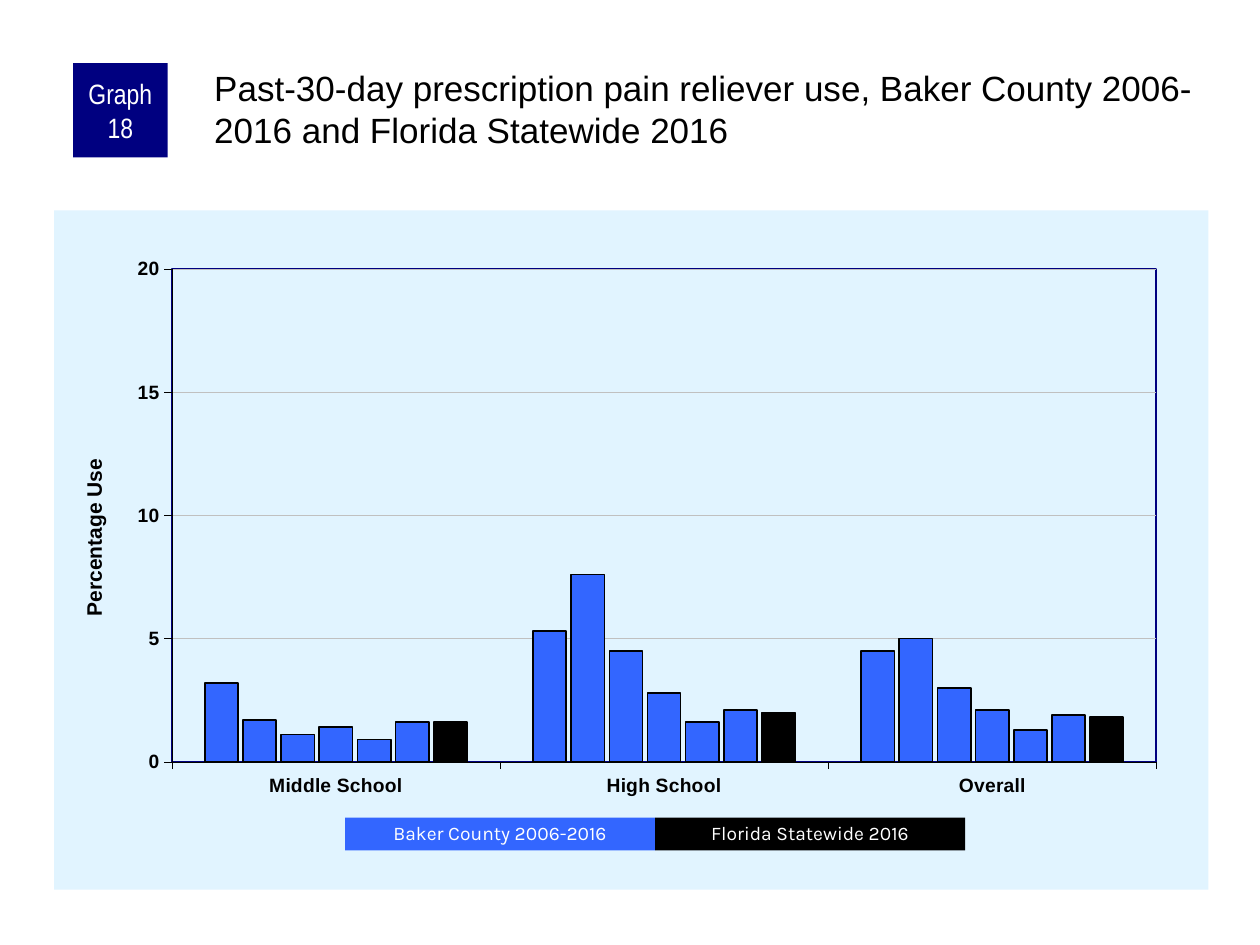
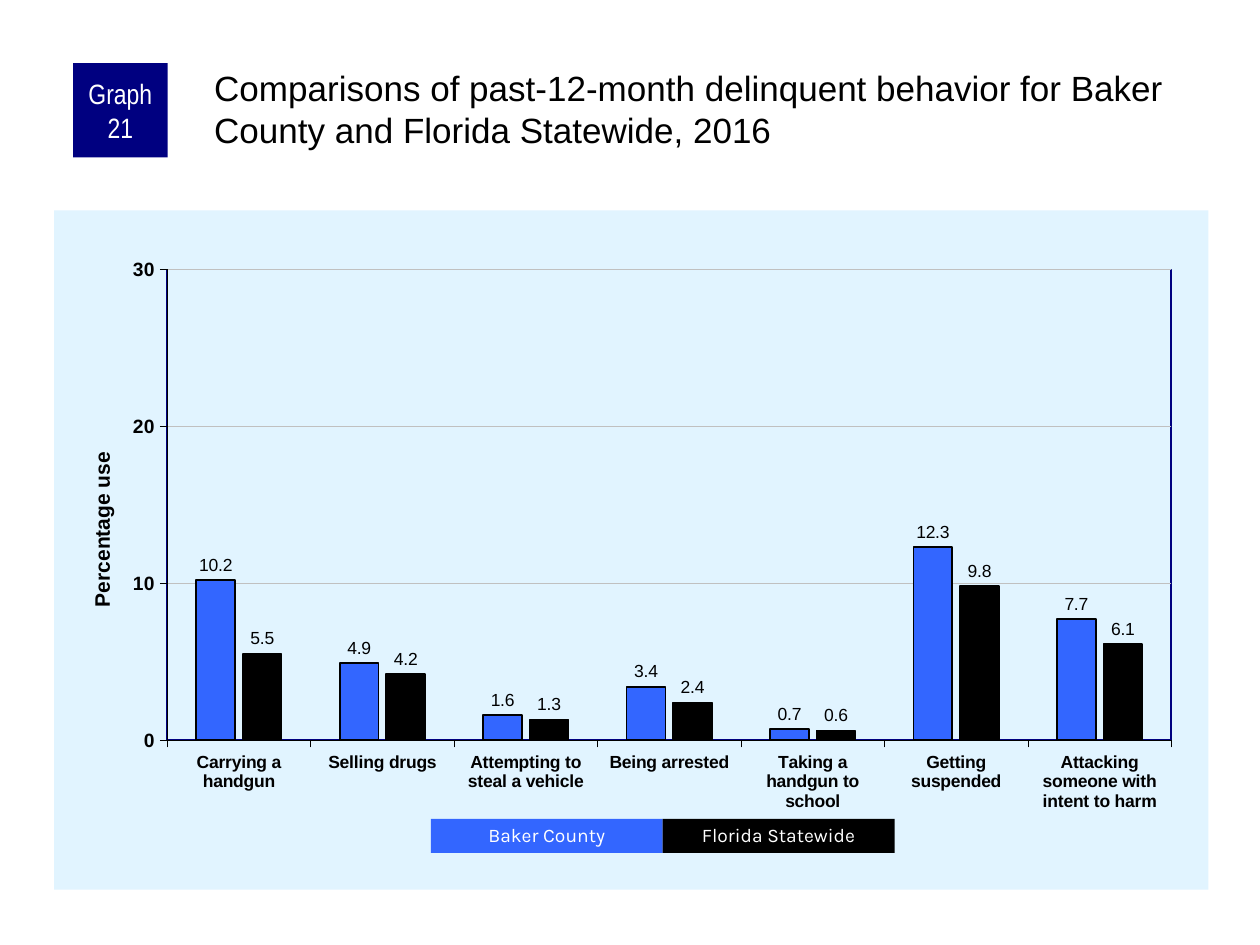
from dataclasses import dataclass
from typing import Optional

from lxml import etree
from pptx import Presentation
from pptx.chart.data import CategoryChartData
from pptx.dml.color import RGBColor
from pptx.enum.chart import XL_CHART_TYPE as ChartType
from pptx.enum.chart import XL_LABEL_POSITION as LabelPosition
from pptx.enum.chart import XL_TICK_MARK as TickMark
from pptx.enum.shapes import MSO_SHAPE as Preset
from pptx.enum.text import MSO_ANCHOR as Anchor
from pptx.enum.text import MSO_AUTO_SIZE as AutoSize
from pptx.enum.text import PP_ALIGN as Align
from pptx.oxml import parse_xml
from pptx.oxml.ns import nsdecls, qn
from pptx.util import Inches, Pt


@dataclass(frozen=True)
class Theme:
    navy: str = "000080"
    county: str = "3366FF"
    state: str = "000000"
    panel: str = "E1F4FF"
    grid: str = "C0C0C0"
    ink: str = "000000"
    white: str = "FFFFFF"
    body_font: str = "Arial"
    badge_font: str = "Arial Narrow"
    legend_font: str = "Karla"
    title_size: float = 20
    badge_size: float = 16
    axis_title_size: float = 12
    axis_size: float = 11
    label_size: float = 10
    legend_size: float = 11


THEME = Theme()


@dataclass(frozen=True)
class Legend:
    left: float
    top: float
    width: float
    height: float
    labels: tuple[str, str]


@dataclass(frozen=True)
class GraphPage:
    number: int
    title: str
    axis_title: str
    axis_title_at: tuple[float, float]
    categories: tuple[str, ...]
    series: tuple[tuple[float, ...], ...]
    maximum: float
    step: float
    gap: int
    overlap: int
    plot_area: tuple[float, float, float, float]
    category_size: float
    show_values: bool
    legend: Legend


PAGES = (
    GraphPage(
        number=18,
        title="Past-30-day prescription pain reliever use, Baker County "
              "2006-2016 and Florida Statewide 2016",
        axis_title="Percentage Use",
        axis_title_at=(0.02, 0.36),
        categories=("Middle School", "High School", "Overall"),
        series=(
            (3.2, 5.3, 4.5),
            (1.7, 7.6, 5),
            (1.1, 4.5, 3),
            (1.4, 2.8, 2.1),
            (0.9, 1.6, 1.3),
            (1.6, 2.1, 1.9),
            (1.6, 2, 1.8),
        ),
        maximum=20, step=5, gap=200, overlap=-15,
        plot_area=(0.102, 0.086, 0.853, 0.726),
        category_size=11,
        show_values=False,
        legend=Legend(2.74, 6.49, 2.46, 0.26,
                      ("Baker County 2006-2016", "Florida Statewide 2016")),
    ),
    GraphPage(
        number=21,
        title="Comparisons of past-12-month delinquent behavior for Baker "
              "County and Florida Statewide, 2016",
        axis_title="Percentage use",
        axis_title_at=(0.027, 0.35),
        categories=(
            "Carrying a handgun", "Selling drugs",
            "Attempting to steal a vehicle", "Being arrested",
            "Taking a handgun to school", "Getting suspended",
            "Attacking someone with intent to harm",
        ),
        series=(
            (10.2, 4.9, 1.6, 3.4, 0.7, 12.3, 7.7),
            (5.5, 4.2, 1.3, 2.4, 0.6, 9.8, 6.1),
        ),
        maximum=30, step=10, gap=150, overlap=-20,
        plot_area=(0.098, 0.087, 0.87, 0.693),
        category_size=10,
        show_values=True,
        legend=Legend(3.42, 6.5, 1.84, 0.27,
                      ("Baker County", "Florida Statewide")),
    ),
)


def color(value: str) -> RGBColor:
    return RGBColor.from_string(value)


def style_font(font, name: str, size: float, value: str,
               bold: Optional[bool] = None) -> None:
    font.name, font.size, font.bold = name, Pt(size), bold
    font.color.rgb = color(value)


def style_line(line, value: str, width: float) -> None:
    line.color.rgb = color(value)
    line.width = Pt(width)


def set_insets(frame, left: float, top: float, right: float,
               bottom: float) -> None:
    frame.margin_left, frame.margin_top = Inches(left), Inches(top)
    frame.margin_right, frame.margin_bottom = Inches(right), Inches(bottom)


def add_box(page, left: float, top: float, width: float, height: float,
            fill: str, text: str, font: str, size: float):
    """Draw a plain filled rectangle with centred white text."""
    box = page.shapes.add_shape(Preset.RECTANGLE, Inches(left), Inches(top),
                                Inches(width), Inches(height))
    box.shadow.inherit = False
    box.fill.solid()
    box.fill.fore_color.rgb = color(fill)
    box.line.fill.background()
    frame = box.text_frame
    frame.text = text
    frame.word_wrap = True
    frame.vertical_anchor = Anchor.MIDDLE
    para = frame.paragraphs[0]
    para.alignment = Align.CENTER
    style_font(para.runs[0].font, font, size, THEME.white)
    return box


def add_title(page, text: str) -> None:
    title = page.shapes.title
    title.left, title.top = Inches(1.67), Inches(0.5)
    title.width, title.height = Inches(7.92), Inches(0.83)
    frame = title.text_frame
    frame.text = text
    frame.word_wrap = True
    frame.auto_size = AutoSize.NONE
    frame.vertical_anchor = Anchor.TOP
    set_insets(frame, 0.03, 0.03, 0, 0)
    para = frame.paragraphs[0]
    para.alignment = Align.LEFT
    style_font(para.runs[0].font, THEME.body_font, THEME.title_size, THEME.ink)


def add_badge(page, number: int) -> None:
    badge = add_box(page, 0.58, 0.5, 0.75, 0.75, THEME.navy,
                    f"Graph {number}", THEME.badge_font, THEME.badge_size)
    set_insets(badge.text_frame, 0.05, 0, 0.05, 0)


def add_legend(page, legend: Legend) -> None:
    for index, label in enumerate(legend.labels):
        fill = (THEME.county, THEME.state)[index]
        key = add_box(page, legend.left + index * legend.width, legend.top,
                      legend.width, legend.height, fill, label,
                      THEME.legend_font, THEME.legend_size)
        key.text_frame.paragraphs[0].line_spacing = 0.9


def set_layout(parent, position: int, **values) -> None:
    """Give a chart part a manual layout."""
    for old in parent.findall(qn("c:layout")):
        parent.remove(old)
    layout = etree.Element(qn("c:layout"))
    manual = etree.SubElement(layout, qn("c:manualLayout"))
    for tag, value in values.items():
        etree.SubElement(manual, qn(f"c:{tag}")).set("val", str(value))
    parent.insert(position, layout)


def fill_chart_areas(chart) -> None:
    """Tint the chart panel and frame the plot area."""
    space = chart.element
    panel = parse_xml(
        f'<c:spPr {nsdecls("c", "a")}><a:solidFill><a:srgbClr '
        f'val="{THEME.panel}"/></a:solidFill><a:ln><a:noFill/></a:ln></c:spPr>')
    space.find(qn("c:chart")).addnext(panel)
    frame = parse_xml(
        f'<c:spPr {nsdecls("c", "a")}><a:noFill/><a:ln w="{Pt(1)}">'
        f'<a:solidFill><a:srgbClr val="{THEME.navy}"/></a:solidFill></a:ln>'
        '</c:spPr>')
    space.find(".//" + qn("c:plotArea")).append(frame)


def style_axes(chart, graph: GraphPage) -> None:
    sizes = ((chart.category_axis, graph.category_size),
             (chart.value_axis, THEME.axis_size))
    for axis, size in sizes:
        axis.major_tick_mark = TickMark.OUTSIDE
        axis.minor_tick_mark = TickMark.NONE
        style_font(axis.tick_labels.font, THEME.body_font, size, THEME.ink, True)
        style_line(axis.format.line, THEME.ink, 0.25)

    values = chart.value_axis
    values.minimum_scale, values.maximum_scale = 0, graph.maximum
    values.major_unit = graph.step
    values.tick_labels.number_format = "0"
    values.tick_labels.number_format_is_linked = False
    values.has_major_gridlines = True
    style_line(values.major_gridlines.format.line, THEME.grid, 0.25)

    title = values.axis_title
    title.text_frame.text = graph.axis_title
    span = title.text_frame.paragraphs[0].runs[0]
    style_font(span.font, THEME.body_font, THEME.axis_title_size, THEME.ink, True)
    body = title.element.find(".//" + qn("a:bodyPr"))
    body.set("rot", "-5400000")
    body.set("vert", "horz")
    left, top = graph.axis_title_at
    set_layout(title.element, 1, xMode="edge", yMode="edge", x=left, y=top)


def add_graph(page, graph: GraphPage) -> None:
    data = CategoryChartData()
    data.categories = graph.categories
    for index, values in enumerate(graph.series, start=1):
        data.add_series(f"Series {index}", values)
    chart = page.shapes.add_chart(
        ChartType.COLUMN_CLUSTERED, Inches(0.43), Inches(1.67),
        Inches(9.16), Inches(5.39), data).chart
    chart.has_title = False
    chart.has_legend = False
    style_font(chart.font, THEME.body_font, THEME.label_size, THEME.ink)

    # Columns: the last series is the state, the others are the county
    plot = chart.plots[0]
    plot.gap_width, plot.overlap = graph.gap, graph.overlap
    plot.vary_by_categories = False
    for index, series in enumerate(plot.series, start=1):
        is_state = index == len(graph.series)
        series.format.fill.solid()
        series.format.fill.fore_color.rgb = color(
            THEME.state if is_state else THEME.county)
        style_line(series.format.line, THEME.ink, 1)
        series.invert_if_negative = False
        if graph.show_values:
            labels = series.data_labels
            labels.show_value = True
            labels.number_format = "0.0"
            labels.number_format_is_linked = False
            labels.position = LabelPosition.OUTSIDE_END
            style_font(labels.font, THEME.body_font, THEME.label_size, THEME.ink)

    style_axes(chart, graph)
    fill_chart_areas(chart)
    left, top, width, height = graph.plot_area
    set_layout(chart.element.find(".//" + qn("c:plotArea")), 0,
               layoutTarget="inner", xMode="edge", yMode="edge",
               x=left, y=top, w=width, h=height)


def main() -> None:
    deck = Presentation()
    deck.slide_width, deck.slide_height = Inches(10), Inches(7.5)
    title_only = deck.slide_layouts[5]
    for graph in PAGES:
        page = deck.slides.add_slide(title_only)
        add_title(page, graph.title)
        add_graph(page, graph)
        add_badge(page, graph.number)
        add_legend(page, graph.legend)
    deck.save("out.pptx")


if __name__ == "__main__":
    main()
